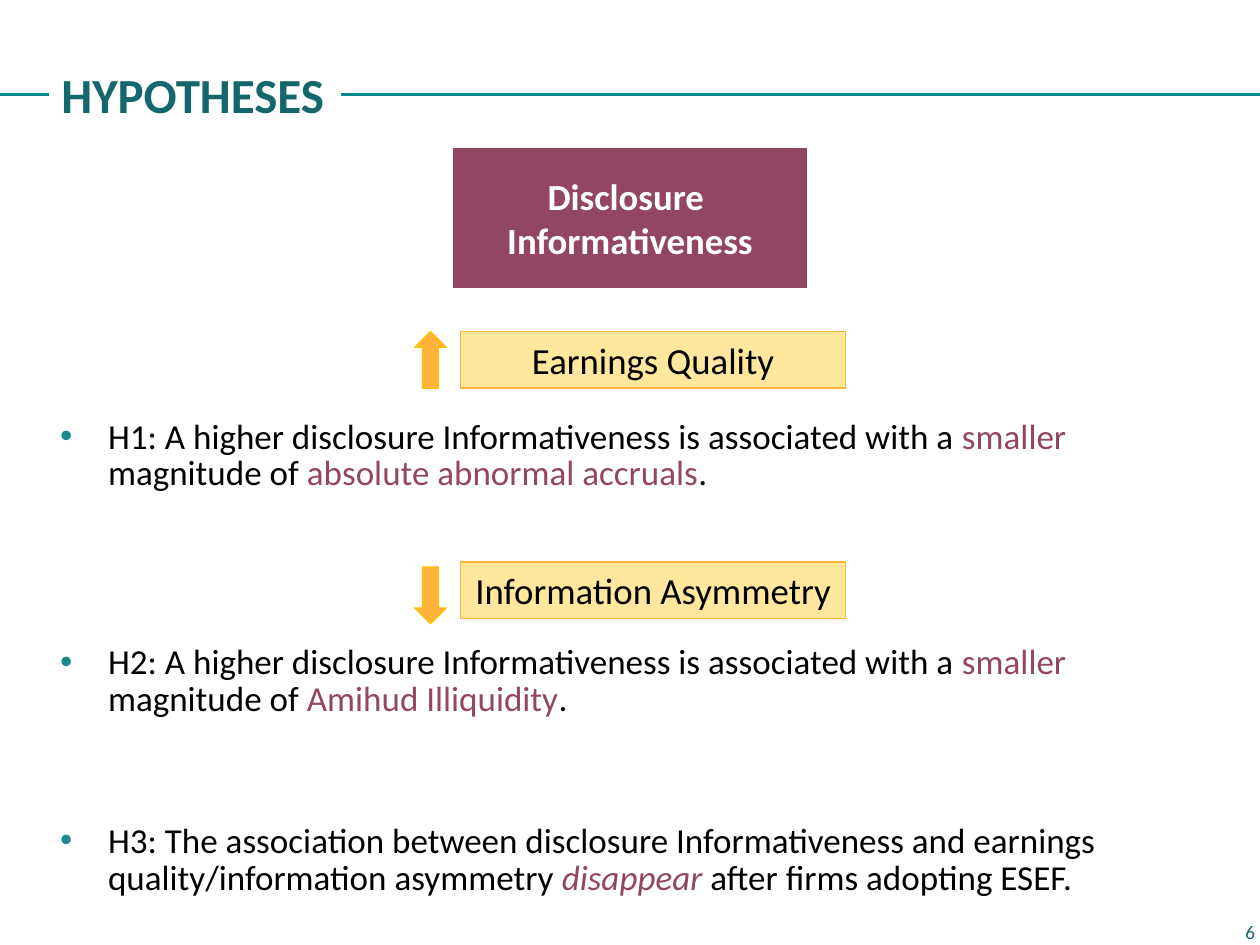
import pptx
import pptx.dml.color
import pptx.enum.shapes
import pptx.enum.text
import pptx.oxml.ns
import pptx.oxml.xmlchemy
import pptx.util
from dataclasses import dataclass

Pt = pptx.util.Pt
SHAPE = pptx.enum.shapes.MSO_SHAPE
ALIGN = pptx.enum.text.PP_ALIGN
ANCHOR = pptx.enum.text.MSO_ANCHOR
new_element = pptx.oxml.xmlchemy.OxmlElement

COLOURS = {
    "rule": "008990",
    "heading": "14676B",
    "bullet": "1B8A8F",
    "plum": "934664",
    "gold": "FFC000",
    "orange": "FFB33B",
    "white": "FFFFFF",
    "black": "000000",
}
FONT = "Calibri"
INDENT = 27.36


@dataclass
class Area:
    left: float
    top: float
    width: float
    height: float

    def lengths(self) -> tuple:
        return Pt(self.left), Pt(self.top), Pt(self.width), Pt(self.height)


@dataclass
class Words:
    text: str
    colour: str = "black"
    italic: bool = False
    break_after: bool = False


@dataclass
class Hypothesis:
    space_before: float
    words: list[Words]


@dataclass
class Effect:
    label: str
    label_top: float
    arrow: SHAPE
    arrow_top: float


EFFECTS = [
    Effect("Earnings Quality", 189.4, SHAPE.UP_ARROW, 189.4),
    Effect("Information Asymmetry", 321.1, SHAPE.DOWN_ARROW, 324),
]


def smaller_magnitude(number: int, measure: str, space_before: float) -> Hypothesis:
    return Hypothesis(space_before, [
        Words(f"H{number}: A higher disclosure Informativeness is associated with a "),
        Words("smaller", "plum", break_after=True),
        Words("magnitude of "),
        Words(measure, "plum"),
        Words("."),
    ])


HYPOTHESES = [
    smaller_magnitude(1, "absolute abnormal accruals", 0),
    smaller_magnitude(2, "Amihud Illiquidity", 87),
    Hypothesis(60, [
        Words("H3: The association between disclosure Informativeness and earnings "
              "quality/information asymmetry "),
        Words("disappear", "plum", italic=True),
        Words(" after firms adopting ESEF."),
    ]),
]


def rgb(name: str) -> pptx.dml.color.RGBColor:
    return pptx.dml.color.RGBColor.from_string(COLOURS[name])


def add_run(para, text: str, size: float, colour: str, bold=False, italic=False) -> None:
    span = para.add_run()
    span.text = text
    span.font.name = FONT
    span.font.size = Pt(size)
    span.font.bold = bold
    span.font.italic = italic
    span.font.color.rgb = rgb(colour)


def add_block(slide, kind, area: Area, fill: str, line: str | None = None, alpha: int = 100):
    """Draw a preset shape; alpha is the fill's opacity in percent."""
    block = slide.shapes.add_shape(kind, *area.lengths())
    block.shadow.inherit = False
    block.fill.solid()
    block.fill.fore_color.rgb = rgb(fill)
    if alpha < 100:
        solid_fill = block._element.spPr.find(pptx.oxml.ns.qn("a:solidFill"))
        opacity = new_element("a:alpha")
        opacity.set("val", str(alpha * 1000))
        solid_fill[0].append(opacity)
    if line:
        block.line.color.rgb = rgb(line)
        block.line.width = Pt(0.75)
    else:
        block.line.fill.background()
    return block


def write_lines(box, lines: list[str], size: float, colour: str, align, bold=False) -> None:
    frame = box.text_frame
    frame.word_wrap = False
    frame.vertical_anchor = ANCHOR.MIDDLE
    for index, text in enumerate(lines):
        para = frame.add_paragraph() if index else frame.paragraphs[0]
        para.alignment = align
        add_run(para, text, size, colour, bold)


def add_rule(slide) -> None:
    rule = slide.shapes.add_connector(
        pptx.enum.shapes.MSO_CONNECTOR.STRAIGHT, Pt(0), Pt(54), Pt(720), Pt(54))
    rule.line.color.rgb = rgb("rule")
    rule.line.width = Pt(2.25)
    rule._element.spPr.append(new_element("a:effectLst"))


def add_bullet(para) -> None:
    properties = para._p.get_or_add_pPr()
    properties.set("marL", str(Pt(INDENT)))
    properties.set("indent", str(-Pt(INDENT)))
    bullet_colour = new_element("a:buClr")
    colour = new_element("a:srgbClr")
    colour.set("val", COLOURS["bullet"])
    bullet_colour.append(colour)
    bullet_font = new_element("a:buFont")
    bullet_font.set("typeface", "Arial")
    bullet = new_element("a:buChar")
    bullet.set("char", "•")
    properties.extend([bullet_colour, bullet_font, bullet])


def add_hypotheses(slide) -> None:
    box = slide.shapes.add_textbox(*Area(27.36, 236.16, 678.96, 294.48).lengths())
    frame = box.text_frame
    frame.word_wrap = True
    for index, hypothesis in enumerate(HYPOTHESES):
        para = frame.add_paragraph() if index else frame.paragraphs[0]
        add_bullet(para)
        para.line_spacing = Pt(21)
        para.space_before = Pt(hypothesis.space_before)
        for words in hypothesis.words:
            add_run(para, words.text, 20, words.colour, italic=words.italic)
            if words.break_after:
                para.add_line_break()


def add_effect(slide, effect: Effect) -> None:
    label = add_block(slide, SHAPE.RECTANGLE, Area(263.2, effect.label_top, 220, 32.4),
                      "gold", "orange", alpha=38)
    write_lines(label, [effect.label], 21, "black", ALIGN.CENTER)
    add_block(slide, effect.arrow, Area(237, effect.arrow_top, 18, 32.4), "orange", "gold")


def main() -> None:
    deck = pptx.Presentation()
    deck.slide_width, deck.slide_height = Pt(720), Pt(540)
    slide = deck.slides.add_slide(deck.slide_layouts[6])

    add_rule(slide)
    add_hypotheses(slide)

    page_number = slide.shapes.add_textbox(*Area(673.9, 521.3, 50.4, 22.3).lengths())
    write_lines(page_number, ["6"], 11, "heading", ALIGN.RIGHT)
    page_number.text_frame.word_wrap = True

    title = add_block(slide, SHAPE.RECTANGLE, Area(28, 33.1, 167, 41), "white")
    write_lines(title, ["HYPOTHESES"], 28, "heading", ALIGN.LEFT, bold=True)

    driver = add_block(slide, SHAPE.RECTANGLE, Area(259.2, 85, 201.6, 79.2), "plum", "plum")
    write_lines(driver, ["Disclosure ", "Informativeness"], 21, "white", ALIGN.CENTER, bold=True)

    for effect in EFFECTS:
        add_effect(slide, effect)

    deck.save("out.pptx")


if __name__ == "__main__":
    main()
